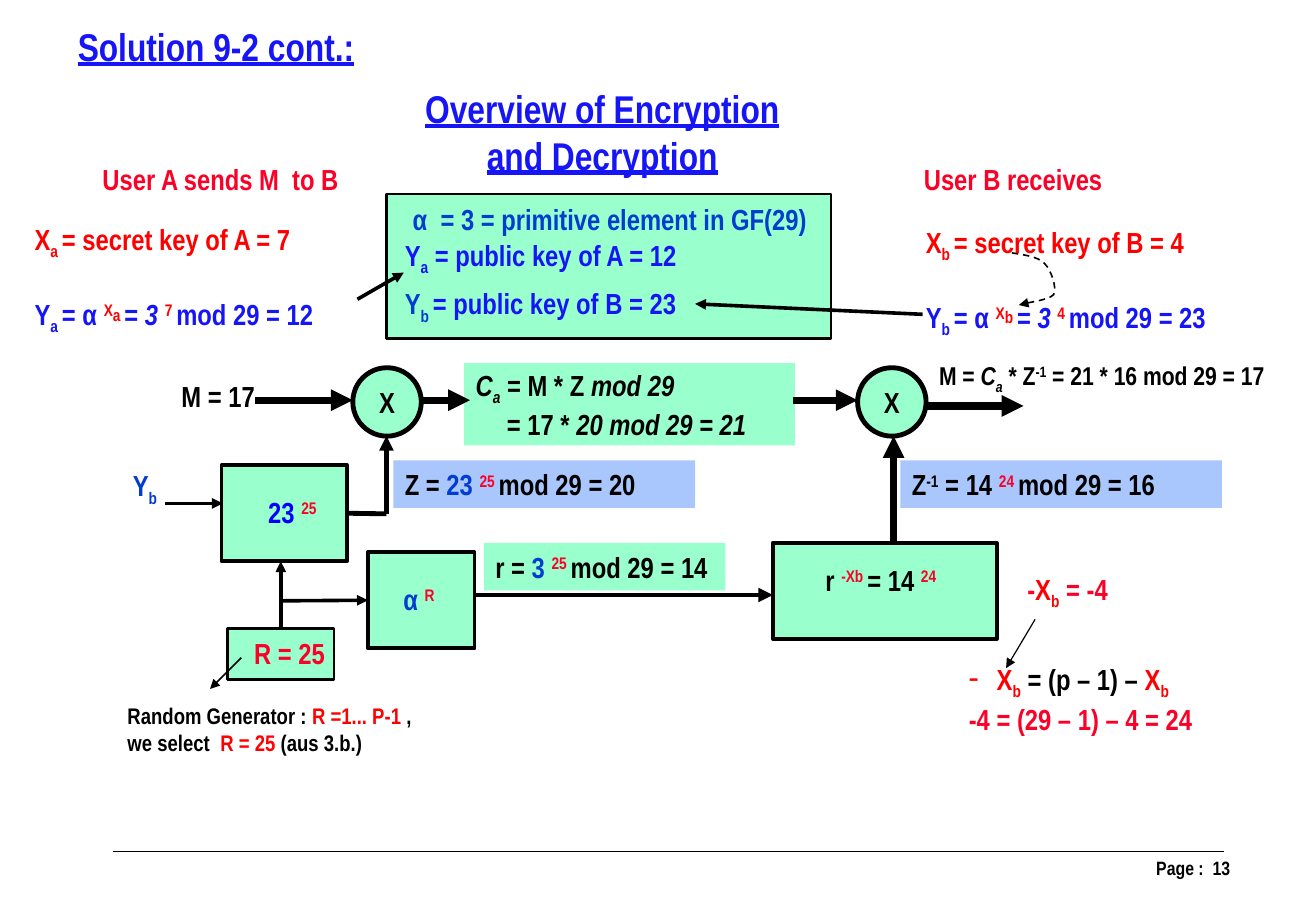
"""Build the slide that gives an overview of encryption and decryption."""
from lxml import etree
from pptx import Presentation
from pptx.dml.color import RGBColor
from pptx.enum import dml, shapes, text
from pptx.oxml.ns import qn
from pptx.util import Inches, Pt

FONT = "Arial Narrow"
HUES = {"k": "000000", "r": "FF0000", "p": "FC0128", "b": "1515F5",
        "n": "023DD0", "e": "0000FF", "mint": "99FFCC", "sky": "A9C7FD"}
BASES = {"_": "-25000", "^": "30000", "~": "16000"}
SIDES = {"l": text.PP_ALIGN.LEFT, "c": text.PP_ALIGN.CENTER, "r": text.PP_ALIGN.RIGHT}


def keys(user, own, pub):
    """Return the key lines of one user."""
    return [[("X", "r"), (f"{user} ", "r_"), (f"= secret key of {user.upper()} = {own}", "r")],
            [("Y", "b"), (f"{user} ", "b_"), ("= α ", "b"), ("X", "r^"), (f"{user} ", "r~"),
             ("= ", "b"), ("3 ", "b/"), (f"{own} ", "r^"), (f"mod 29 = {pub}", "b")]]


TITLE = [[("Solution 9-2 cont.:", "b")]]

# name: place, preset, fill, line width
BOXES = {
    "public": ((3.33, 1.67, 3.83, 1.25), "RECTANGLE", "mint", 1.5),
    "power": ((1.91, 4.01, 1.08, 0.83), "RECTANGLE", "mint", 2.25),
    "root": ((6.66, 4.68, 1.93, 0.83), "RECTANGLE", "mint", 2.25),
    "random": ((1.96, 5.42, 0.92, 0.44), "RECTANGLE", "mint", 1.5),
    "alpha": ((3.17, 4.76, 0.92, 0.83), "RECTANGLE", "mint", 2.25),
    "mix A": ((3.04, 3.17, 0.59, 0.59), "OVAL", "mint", 3),
    "mix B": ((7.39, 3.17, 0.59, 0.59), "OVAL", "mint", 3),
    "cipher": ((4, 3.13, 2.85, 0.71), "RECTANGLE", "mint", 0),
    "r": ((4.17, 4.68, 2.08, 0.41), "RECTANGLE", "mint", 0),
    "Z": ((3.39, 3.97, 2.6, 0.41), "RECTANGLE", "sky", 0),
    "inverse": ((7.76, 3.97, 2.77, 0.41), "RECTANGLE", "sky", 0),
}
# name: align, paragraphs of (text, style)
LABELS = {
    "mix A": ("c", [[("X", "k")]]),
    "mix B": ("c", [[("X", "k")]]),
    "cipher": ("l", [[("C", "k/"), ("a", "k/_"), (" = M * Z ", "k"), ("mod 29", "k/")],
                     [("= 17 * ", "k"), ("20 mod 29 = 21", "k/")]]),
    "r": ("l", [[("r =", "k"), (" 3 ", "n"), ("25 ", "p^"), ("mod 29 = 14", "k")]]),
    "Z": ("l", [[("Z = ", "k"), ("23 ", "n"), ("25 ", "p^"), ("mod 29 = 20", "k")]]),
    "inverse": ("l", [[("Z", "k"), ("-1", "k^"), (" = 14 ", "k"), ("24 ", "p^"),
                       ("mod 29 = 16", "k")]]),
}
# name: place, size, align, paragraphs
NOTES = {
    "heading": ((3.37, 0.68, 3.64, 0.91), 24, "c",
                [[("Overview of Encryption and Decryption", "b")]]),
    "sender": ((0.44, 1.34, 2.92, 0.4), 18, "c", [[("User A sends M  to B", "p")]]),
    "receiver": ((7.27, 1.34, 2.92, 0.4), 18, "c", [[("User B receives", "p")]]),
    "keys A": ((0.2, 1.9, 3.08, 1.01), 18, "l", keys("a", 7, 12)),
    "keys B": ((7.88, 1.92, 3.07, 1.01), 18, "l", keys("b", 4, 23)),
    "field": ((3.42, 1.68, 3.67, 0.41), 18, "c",
              [[("α  = 3 = primitive element in GF(29)", "n")]]),
    "public A": ((3.39, 2.01, 3.87, 0.41), 18, "l",
                 [[("Y", "b"), ("a", "b_"), (" = public key of A = 12", "b")]]),
    "public B": ((3.39, 2.43, 3.83, 0.41), 18, "l",
                 [[("Y", "n"), ("b ", "n_"), ("= public key of B = 23", "b")]]),
    "message": ((1.46, 3.21, 0.84, 0.41), 18, "c", [[("M = 17", "k")]]),
    "plain": ((7.88, 3.07, 3.23, 0.37), 16, "c",
              [[("M = ", "k"), ("C", "k/"), ("a", "k/_"), (" * Z", "k"), ("-1", "k^"),
                (" = 21 * 16 mod 29 = 17", "k")]]),
    "key in": ((0.83, 4, 0.84, 0.41), 18, "c", [[("Y", "n"), ("b", "n_")]]),
    "power": ((1.98, 4.21, 1.08, 0.41), 18, "c", [[("23 ", "e"), ("25", "p^")]]),
    "alpha": ((3.11, 4.96, 1, 0.41), 18, "c", [[("α ", "n"), ("R", "p^")]]),
    "random": ((2.08, 5.42, 0.83, 0.41), 18, "c", [[("R = 25", "p")]]),
    "root": ((6.38, 4.79, 2.42, 0.41), 18, "c",
             [[("r ", "k"), ("-Xb ", "p^"), ("= 14 ", "k"), ("24", "p^")]]),
    "minus": ((8.5, 4.89, 1.4, 0.41), 18, "c",
              [[("-", "p"), ("X", "r"), ("b", "r_"), (" = -4", "p")]]),
    "proof": ((8.25, 5.67, 2.78, 0.71), 18, "l",
              [[("X", "r"), ("b", "r_"), (" = (p – 1) – ", "k"), ("X", "r"), ("b", "r_")],
               [("-4 = (29 – 1) – 4 = 24", "p")]]),
    "choice": ((1, 6, 3.92, 0.57), 14, "l",
               [[("Random Generator : ", "k"), ("R =1... P-1 ", "r"), (",", "k")],
                [("we select  ", "k"), ("R = 25 ", "r"), ("(aus 3.b.)", "k")]]),
    "page": ((8.12, 7.33, 2.58, 0.3), 12, "r", [[("Page :  13", "k")]]),
}
LOOSE = {"mix A", "mix B", "r", "field", "message"}
# from, to, width, arrow, joined start, joined end
LINES = [
    ((0.97, 7.34), (10.55, 7.34), 0.75, False, None, None),
    ((2.2, 3.45), (3.04, 3.45), 4.5, True, None, None),
    ((3.62, 3.45), (4.05, 3.45), 4.5, True, None, None),
    ((6.83, 3.45), (7.39, 3.45), 4.5, True, None, None),
    ((7.98, 3.5), (8.82, 3.5), 4.5, True, None, None),
    ((7.7, 4.68), (7.7, 3.76), 4.5, True, None, None),
    ((2.99, 4.43), (3.33, 4.43), 3, False, ("power", 3), None),
    ((3.33, 4.43), (3.33, 3.76), 3, True, None, None),
    ((1.42, 4.34), (1.92, 4.34), 2.25, True, None, None),
    ((2.42, 5.42), (2.42, 4.84), 2.25, True, ("random", 0), None),
    ((2.42, 5.18), (3.17, 5.18), 2.25, True, None, ("alpha", 1)),
    ((4.08, 5.13), (6.66, 5.13), 3, True, None, None),
    ((7.95, 2.71), (5.99, 2.62), 2.25, True, None, None),
    ((3.08, 2.58), (3.48, 2.35), 2.25, True, None, None),
    ((8.92, 5.34), (8.67, 5.76), 0.75, True, None, None),
    ((2.08, 5.67), (1.81, 5.94), 1, True, None, None),
]
CURVE = [(8.72, 2.18), (8.83, 2.2), (8.94, 2.21), (9, 2.27), (9.06, 2.33),
         (9.11, 2.48), (9.08, 2.54), (9.04, 2.59), (8.83, 2.61), (8.78, 2.63)]


def hue(key):
    return RGBColor.from_string(HUES[key])


def inch(nums):
    return [Inches(n) for n in nums]


def write(shape, size, side, paras, wrap=True):
    frame = shape.text_frame
    frame.word_wrap = wrap
    frame.auto_size = text.MSO_AUTO_SIZE.NONE
    frame.vertical_anchor = text.MSO_ANCHOR.MIDDLE
    for i, parts in enumerate(paras):
        para = frame.add_paragraph() if i else frame.paragraphs[0]
        para.alignment = SIDES[side]
        font = para.font
        font.name, font.size, font.bold = FONT, Pt(size), True
        font.underline = size == 24
        for words, style in parts:
            run = para.add_run()
            run.text = words
            run.font.color.rgb = hue(style[0])
            if "/" in style:
                run.font.italic = True
            if style[-1] in BASES:
                run.font._element.set("baseline", BASES[style[-1]])
    return frame.paragraphs


def stroke(shape, width, arrow):
    shape.line.color.rgb = hue("k")
    shape.line.width = Pt(width)
    if arrow:
        ln = shape._element.spPr.find(qn("a:ln"))
        etree.SubElement(ln, qn("a:tailEnd"), type="triangle")


def bend(a, b, c, d, steps=8):
    for i in range(1, steps + 1):
        t = i / steps
        s = 1 - t
        yield inch(s**3 * w + 3 * s * s * t * x + 3 * s * t * t * y + t**3 * z
                   for w, x, y, z in zip(a, b, c, d))


def main():
    prs = Presentation()
    prs.slide_width, prs.slide_height = inch((11.34, 7.88))
    slide = prs.slides.add_slide(prs.slide_layouts[5])
    pool = slide.shapes
    title = pool.title
    title.left, title.top, title.width, title.height = inch((0.57, 0.15, 2.9, 0.5))
    write(title, 24, "l", TITLE)

    boxes, paras = {}, {}
    for name, (place, kind, fill, width) in BOXES.items():
        box = boxes[name] = pool.add_shape(getattr(shapes.MSO_SHAPE, kind), *inch(place))
        box.shadow.inherit = False
        box.fill.solid()
        box.fill.fore_color.rgb = hue(fill)
        if width:
            stroke(box, width, False)
        else:
            box.line.fill.background()
        if name in LABELS:
            paras[name] = write(box, 18, *LABELS[name], name not in LOOSE)

    for start, end, width, arrow, tie, knot in LINES:
        line = pool.add_connector(shapes.MSO_CONNECTOR.STRAIGHT, *inch(start + end))
        if tie:
            line.begin_connect(boxes[tie[0]], tie[1])
        if knot:
            line.end_connect(boxes[knot[0]], knot[1])
        stroke(line, width, arrow)
        etree.SubElement(line._element.spPr, qn("a:effectLst"))

    pen = pool.build_freeform(*inch(CURVE[0]))
    for i in range(0, len(CURVE) - 1, 3):
        pen.add_line_segments(list(bend(*CURVE[i:i + 4])), close=False)
    arc = pen.convert_to_shape()
    arc.shadow.inherit = False
    arc.fill.background()
    arc.line.dash_style = dml.MSO_LINE.DASH
    stroke(arc, 1, True)

    for name, (place, size, side, lines) in NOTES.items():
        note = pool.add_textbox(*inch(place))
        paras[name] = write(note, size, side, lines, name not in LOOSE)

    for name in ("keys A", "keys B"):
        paras[name][0].space_after = Pt(22)
    paras["cipher"][1]._p.get_or_add_pPr().set("marL", str(Inches(0.27)))
    props = paras["proof"][0]._p.get_or_add_pPr()
    props.set("marL", str(Inches(0.24)))
    props.set("indent", str(Inches(-0.24)))
    mark = etree.Element(qn("a:buChar"), char="-")
    props.insert(0, mark)
    prs.save("out.pptx")


if __name__ == "__main__":
    main()
